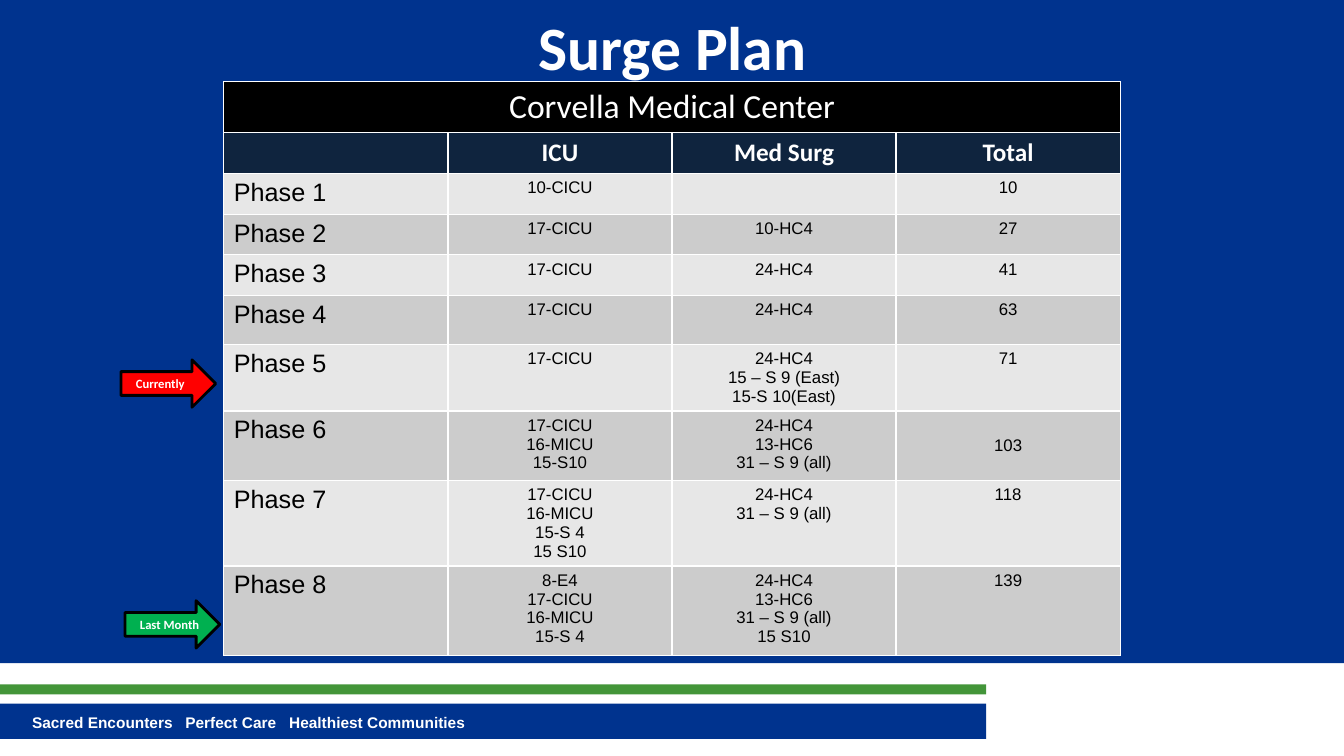
from lxml.etree import SubElement
from pptx import Presentation
from pptx.dml.color import RGBColor
from pptx.enum.shapes import MSO_SHAPE
from pptx.enum.text import MSO_ANCHOR, PP_ALIGN
from pptx.oxml.ns import qn
from pptx.util import Inches, Pt

COLORS = {
    "blue": "00338E", "navy": "0F243E", "green": "439539",
    "white": "FFFFFF", "black": "000000", "light": "E7E7E7",
    "dark": "CCCCCC", "red": "FF0000", "lime": "00B050",
}
HEADS = ["", "ICU", "Med Surg", "Total"]
# Each phase: ICU units, Med Surg units, total beds
PHASES = [
    (["10-CICU"], [], "10"),
    (["17-CICU"], ["10-HC4"], "27"),
    (["17-CICU"], ["24-HC4"], "41"),
    (["17-CICU"], ["24-HC4"], "63"),
    (["17-CICU"], ["24-HC4", "15 – S 9 (East)", "15-S 10(East)"], "71"),
    (["17-CICU", "16-MICU", "15-S10"],
     ["24-HC4", "13-HC6", "31 – S 9 (all)"], "103"),
    (["17-CICU", "16-MICU", "15-S 4", "15 S10"],
     ["24-HC4", "31 – S 9 (all)"], "118"),
    (["8-E4", "17-CICU", "16-MICU", "15-S 4"],
     ["24-HC4", "13-HC6", "31 – S 9 (all)", "15 S10"], "139"),
]
HEIGHTS = [0.49, 0.4, 0.4, 0.4, 0.4, 0.49, 0.49, 0.69, 0.69, 0.89]
MOTTO = ["Sacred Encounters", "Perfect Care", "Healthiest Communities"]


def color(name):
    return RGBColor.from_string(COLORS[name])


def write(frame, lines, size, face, ink, bold=False, align=PP_ALIGN.LEFT):
    """Put each line in its own paragraph."""
    for i, line in enumerate(lines):
        para = frame.paragraphs[0] if i == 0 else frame.add_paragraph()
        para.alignment = align
        run = para.add_run()
        run.text = line
        font = run.font
        font.size, font.name, font.bold = Pt(size), face, bold
        font.color.rgb = color(ink)


def add_block(shapes, kind, box, fill, line=None):
    block = shapes.add_shape(kind, *map(Inches, box))
    block.shadow.inherit = False
    block.fill.solid()
    block.fill.fore_color.rgb = color(fill)
    if line:
        block.line.color.rgb = color(line)
        block.line.width = Pt(2)
    else:
        block.line.fill.background()


def add_motto(shapes):
    box = shapes.add_textbox(*map(Inches, (0.22, 7.03, 8.33, 0.29)))
    frame = box.text_frame
    frame.word_wrap = True
    props = frame.paragraphs[0]._p.get_or_add_pPr()
    tabs = SubElement(props, qn("a:tabLst"))
    for stop in (1.52, 2.55):
        SubElement(tabs, qn("a:tab"), pos=str(Inches(stop)), algn="l")
    write(frame, ["\t".join(MOTTO)], 11, "Arial", "white", True)


def add_title(slide):
    title = slide.shapes.title
    title.left, title.top = Inches(0.67), Inches(0)
    title.width, title.height = Inches(12), Inches(0.92)
    frame = title.text_frame
    frame.vertical_anchor = MSO_ANCHOR.MIDDLE
    write(frame, ["Surge Plan"], 44, "Calibri", "white", True, PP_ALIGN.CENTER)
    # Bring the title in front of the blue backdrop
    title.element.getparent().append(title.element)


def fill_row(table, row, fill):
    for cell in table.rows[row].cells:
        cell.fill.solid()
        cell.fill.fore_color.rgb = color(fill)


def add_plan(shapes):
    box = map(Inches, (2.22, 0.81, 8.89, sum(HEIGHTS)))
    table = shapes.add_table(len(HEIGHTS), len(HEADS), *box).table
    for row, height in zip(table.rows, HEIGHTS):
        row.height = Inches(height)

    fill_row(table, 0, "black")
    table.cell(0, 0).merge(table.cell(0, len(HEADS) - 1))
    write(table.cell(0, 0).text_frame, ["Corvella Medical Center"],
          24, "Calibri", "white", align=PP_ALIGN.CENTER)

    fill_row(table, 1, "navy")
    for col, head in enumerate(HEADS):
        if head:
            write(table.cell(1, col).text_frame, [head],
                  18, "Calibri", "white", True, PP_ALIGN.CENTER)

    for num, (icu, surg, total) in enumerate(PHASES, 1):
        row = num + 1
        fill_row(table, row, "light" if num % 2 else "dark")
        write(table.cell(row, 0).text_frame, [f"Phase {num}"],
              18, "Arial", "black")
        for col, lines in enumerate((icu, surg, [total]), 1):
            write(table.cell(row, col).text_frame, lines,
                  12, "Arial", "black", align=PP_ALIGN.CENTER)
    table.cell(7, 3).vertical_anchor = MSO_ANCHOR.MIDDLE


def add_marker(shapes, left, top, width, label, fill):
    """Group an arrow with the label lying on it."""
    group = shapes.add_group_shape().shapes
    add_block(group, MSO_SHAPE.RIGHT_ARROW, (left, top, 0.94, 0.47),
              fill, "black")
    box = group.add_textbox(*map(Inches, (left + 0.05, top + 0.11, width, 0.25)))
    box.text_frame.word_wrap = False
    write(box.text_frame, [label], 9, "Calibri", "white", True)


def main():
    deck = Presentation()
    deck.slide_width, deck.slide_height = Inches(13.33), Inches(7.5)
    slide = deck.slides.add_slide(deck.slide_layouts[5])
    shapes = slide.shapes
    for box, fill in (
        ((0, 0, 13.33, 6.58), "blue"),
        ((-0.03, 6.98, 9.81, 0.35), "blue"),
        ((-0.03, 6.79, 9.81, 0.1), "green"),
    ):
        add_block(shapes, MSO_SHAPE.RECTANGLE, box, fill)
    add_motto(shapes)
    add_title(slide)
    add_plan(shapes)
    add_marker(shapes, 1.2, 3.57, 0.69, "Currently", "red")
    add_marker(shapes, 1.24, 5.96, 0.8, "Last Month", "lime")
    deck.save("out.pptx")


if __name__ == "__main__":
    main()
